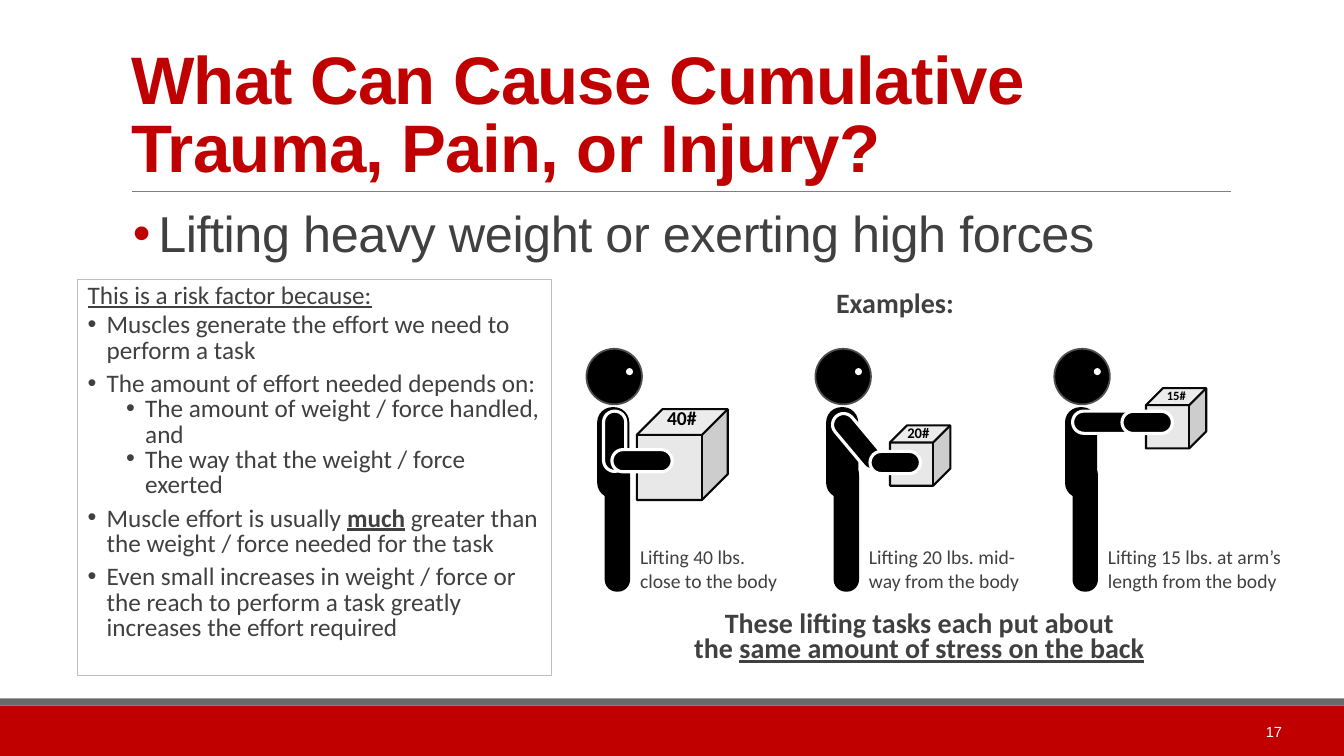
from lxml.etree import SubElement
from pptx import Presentation
from pptx.dml.color import RGBColor
from pptx.enum.shapes import MSO_CONNECTOR, MSO_SHAPE
from pptx.enum.text import MSO_ANCHOR, MSO_AUTO_SIZE, PP_ALIGN
from pptx.oxml.ns import qn
from pptx.util import Cm, Pt

RED = RGBColor(0xC0, 0x00, 0x00)
DARK = RGBColor(0x40, 0x40, 0x40)
STEEL = RGBColor(0x69, 0x69, 0x69)
GRAY = RGBColor(0x80, 0x80, 0x80)
RIM = RGBColor(0x4E, 0x4E, 0x4E)
EDGE = RGBColor(0x08, 0x08, 0x08)
PALE = RGBColor(0xD9, 0xD9, 0xD9)
FRAME = RGBColor(0xBF, 0xBF, 0xBF)
BLACK = RGBColor(0x00, 0x00, 0x00)
WHITE = RGBColor(0xFF, 0xFF, 0xFF)

# Lengths in cm. Head left; arm: dx, top, length, angle; box: dx, top, size;
# hand: dx, top, length; label: text, dx, top, width, points; note: text, width
LIFTS = [
    dict(left=26.57, arm=(1.02, 9.8, 1.68, 90), box=(2.31, 9.78, 1.52),
         hand=(2.06, 10.01, 1.27), label=("15#", 2.54, 9.78, 1.07, 9),
         note=("Lifting 15 lbs. at arm’s length from the body", 4.95)),
    dict(left=20.55, arm=(0.79, 10.29, 1.68, 140), box=(1.88, 10.72, 1.52),
         hand=(1.73, 11.02, 1.27), label=("20#", 1.96, 10.74, 1.27, 10.5),
         note=("Lifting 20 lbs. mid-way from the body", 4.34)),
    dict(left=14.78, arm=(0.43, 10.36, 1.52, 0), box=(1.27, 10.31, 2.29),
         hand=(1.12, 10.85, 1.52), label=("40#", 1.73, 10.44, 1.35, 14),
         note=("Lifting 40 lbs. close to the body", 4.01)),
]

# Text, level (None: no bullet), space after in points
RISKS = [
    ("This is a risk factor because:", None, 3),
    ("Muscles generate the effort we need to perform a task", 0, 6),
    ("The amount of effort needed depends on:", 0, 0),
    ("The amount of weight / force handled, and", 1, 0),
    ("The way that the weight / force exerted", 1, 6),
    ("Muscle effort is usually ", 0, 6),
    ("Even small increases in weight / force or the reach to perform a task "
     "greatly increases the effort required", 0, 0),
]


def place(item, left, top, width, height):
    item.left, item.top = Cm(left), Cm(top)
    item.width, item.height = Cm(width), Cm(height)


def style(para, size, color=DARK, bold=False, face="Calibri", space=None):
    """Format every run; space is letter spacing in hundredths of a point."""
    for run in para.runs:
        font = run.font
        font.name, font.size, font.bold = face, Pt(size), bold
        font.color.rgb = color
        if space:
            run._r.get_or_add_rPr().set("spc", str(space))


def bullet(para, left, hang, color=None):
    """Add a bullet; call it once the paragraph spacing is set."""
    props = para._p.get_or_add_pPr()
    props.set("marL", str(Cm(left)))
    props.set("indent", str(-Cm(hang)))
    if color is not None:
        tint = SubElement(props, qn("a:buClr"))
        SubElement(tint, qn("a:srgbClr")).set("val", str(color))
    SubElement(props, qn("a:buFont")).set("typeface", "Arial")
    SubElement(props, qn("a:buChar")).set("char", "•")


def add_form(shapes, kind, spot, fill=None, line=None, width=1.25, adjust=None):
    form = shapes.add_shape(kind, *(Cm(n) for n in spot))
    form.shadow.inherit = False
    if fill is None:
        form.fill.background()
    else:
        form.fill.solid()
        form.fill.fore_color.rgb = fill
    if line is None:
        form.line.fill.background()
    else:
        form.line.color.rgb = line
        form.line.width = Pt(width)
    if adjust is not None:
        form.adjustments[0] = adjust
    return form


def add_text(shapes, spot, text, size, align=PP_ALIGN.LEFT, lead=None, **look):
    box = shapes.add_textbox(*(Cm(n) for n in spot))
    frame = box.text_frame
    frame.word_wrap = True
    frame.text = text
    for para in frame.paragraphs:
        para.alignment = align
        if lead:
            para.line_spacing = Pt(lead)
        style(para, size, **look)
    return frame


def add_limb(shapes, left, top, length, angle):
    limb = add_form(shapes, MSO_SHAPE.ROUNDED_RECTANGLE,
                    (left, top, 0.56, length), BLACK, WHITE, 2.25, 0.5)
    limb.rotation = angle


def add_crate(shapes, left, top, size):
    crate = add_form(shapes, MSO_SHAPE.CUBE, (left, top, size, size),
                     PALE, EDGE, 1.5, 0.283)
    tint = crate.fill._xPr.find(qn("a:solidFill"))[0]
    SubElement(tint, qn("a:alpha")).set("val", "60000")


def add_lift(slide, left, arm, box, hand, label, note):
    """Draw one worker with a crate and the note beside the legs."""
    parts = slide.shapes.add_group_shape().shapes
    add_form(parts, MSO_SHAPE.OVAL, (left, 8.79, 1.4, 1.4), BLACK, RIM)
    add_form(parts, MSO_SHAPE.OVAL, (left + 1.02, 9.3, 0.13, 0.13), WHITE, WHITE)
    for shift, top, width, height in [(0.27, 10.26, 0.81, 2.29),
                                      (0.46, 11.66, 0.64, 3.25)]:
        add_form(parts, MSO_SHAPE.ROUNDED_RECTANGLE,
                 (left + shift, top, width, height), BLACK, adjust=0.473)
    add_limb(parts, left + arm[0], *arm[1:])
    add_crate(parts, left + box[0], *box[1:])
    add_limb(parts, left + hand[0], *hand[1:], 90)
    text, shift, top, width, size = label
    add_text(parts, (left + shift, top, width, 0.51), text, size,
             PP_ALIGN.CENTER, 7, color=BLACK, bold=True)
    text, width = note
    add_text(slide.shapes, (left + 1.1, 13.61, width, 1.45), text, 14)


def add_risks(shapes):
    box = add_form(shapes, MSO_SHAPE.RECTANGLE, (1.96, 7.04, 11.94, 9.98),
                   line=FRAME, width=0.75)
    frame = box.text_frame
    frame.word_wrap = True
    frame.vertical_anchor = MSO_ANCHOR.TOP
    frame.text = "\n".join(text for text, _, _ in RISKS)
    paras = frame.paragraphs
    stress = paras[5].add_run()
    stress.text = "much"
    paras[5].add_run().text = " greater than the weight / force needed for the task"
    for para, (_, level, after) in zip(paras, RISKS):
        para.alignment = PP_ALIGN.LEFT
        para.line_spacing = Pt(18)
        para.space_after = Pt(after)
        style(para, 18)
        if level is not None:
            para.level = level
            bullet(para, 0.48 + 0.97 * level, 0.48)
    paras[0].runs[0].font.underline = True
    stress.font.bold = stress.font.underline = True


def add_frame(shapes):
    """Draw the footer bars and the rule under the title."""
    add_form(shapes, MSO_SHAPE.RECTANGLE, (0, 17.78, 33.87, 1.27), RED)
    add_form(shapes, MSO_SHAPE.RECTANGLE, (0, 17.6, 33.87, 0.18), STEEL)
    rule = shapes.add_connector(MSO_CONNECTOR.STRAIGHT,
                                Cm(3.33), Cm(4.83), Cm(31.01), Cm(4.83))
    rule.line.color.rgb = GRAY
    rule.line.width = Pt(0.5)
    SubElement(rule._element.spPr, qn("a:effectLst"))


def fill_heads(slide):
    """Fill the title and body placeholders."""
    title, body = slide.shapes.title, slide.placeholders[1]
    place(title, 3.05, 0.79, 27.94, 4.04)
    place(body, 3.05, 5.13, 30.61, 11.18)
    title.text_frame.text = "What Can Cause Cumulative Trauma, Pain, or Injury?"
    body.text_frame.text = "Lifting heavy weight or exerting high forces"
    for item in (title, body):
        item.text_frame.auto_size = MSO_AUTO_SIZE.NONE
        item.text_frame.word_wrap = True
    title.text_frame.vertical_anchor = MSO_ANCHOR.BOTTOM
    body.text_frame.vertical_anchor = MSO_ANCHOR.TOP
    body.text_frame.margin_left = body.text_frame.margin_right = 0
    head, point = (item.text_frame.paragraphs[0] for item in (title, body))
    head.alignment = point.alignment = PP_ALIGN.LEFT
    head.line_spacing, point.line_spacing = 0.85, 0.9
    point.space_before, point.space_after = Pt(12), Pt(2)
    style(head, 48, RED, True, "Arial", -50)
    style(point, 36, face="Arial", space=-30)
    bullet(point, 0.94, 0.64, RED)


def main():
    deck = Presentation()
    deck.slide_width, deck.slide_height = Cm(33.87), Cm(19.05)
    slide = deck.slides.add_slide(deck.slide_layouts[1])
    shapes = slide.shapes
    add_frame(shapes)
    fill_heads(slide)
    add_text(shapes, (20.78, 7.06, 3.51, 1.12), "Examples:", 20,
             PP_ALIGN.RIGHT, bold=True).word_wrap = False
    page = add_text(shapes, (28.93, 17.93, 3.63, 1.02), "17", 10.5,
                    PP_ALIGN.RIGHT, color=WHITE, face="Arial")
    page.vertical_anchor = MSO_ANCHOR.MIDDLE
    for lift in LIFTS:
        add_lift(slide, **lift)
    close = add_text(shapes, (17.2, 15.34, 11.94, 1.57),
                     "These lifting tasks each put about\nthe ", 20,
                     PP_ALIGN.CENTER, 18, bold=True)
    last = close.paragraphs[1]
    last.add_run().text = "same amount of stress on the back"
    style(last, 20, bold=True)
    last.runs[1].font.underline = True
    add_risks(shapes)
    deck.save("out.pptx")


if __name__ == "__main__":
    main()
